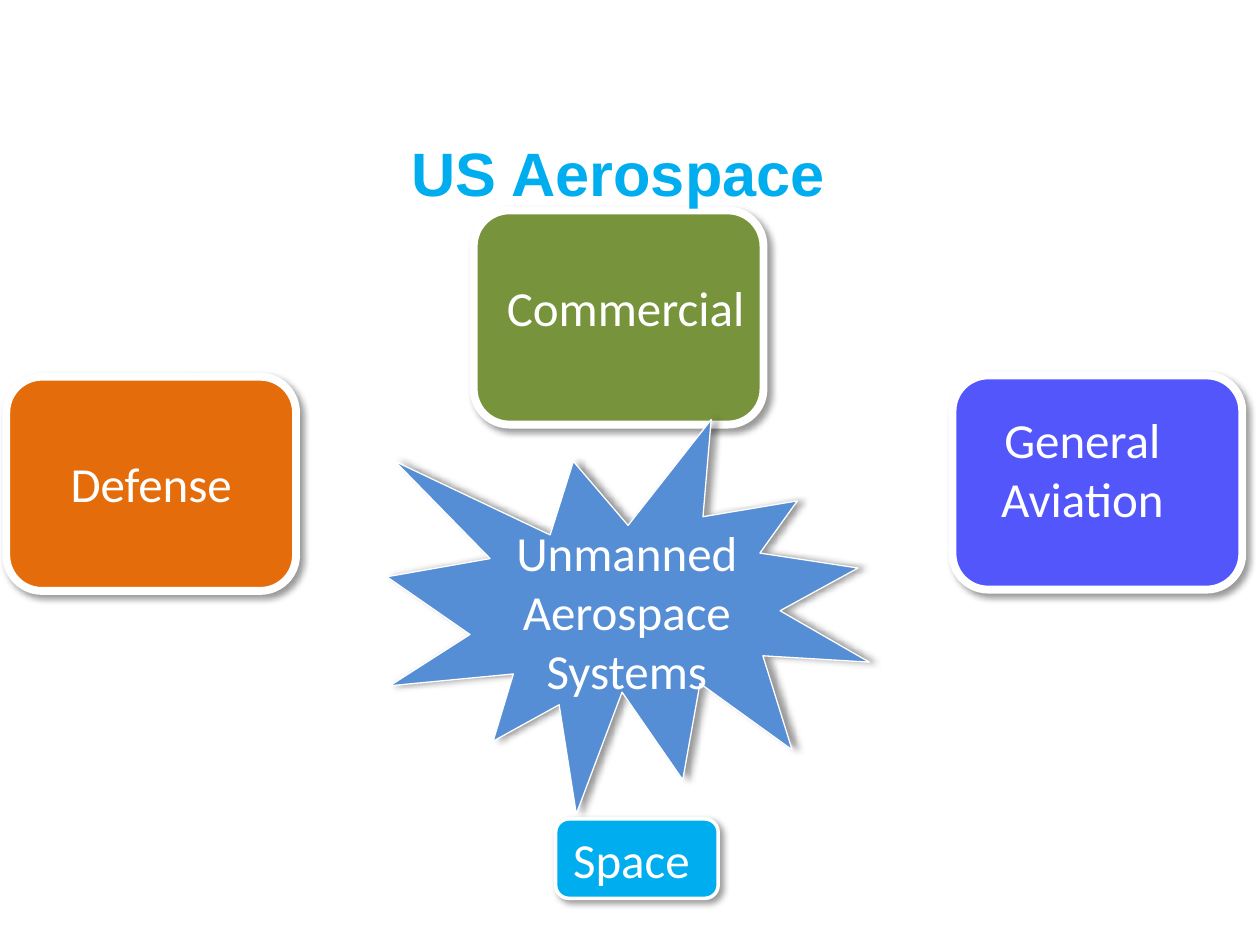
from dataclasses import dataclass

from lxml import etree
from pptx import Presentation
from pptx.dml.color import RGBColor
from pptx.enum.shapes import MSO_SHAPE
from pptx.enum.text import MSO_ANCHOR, MSO_AUTO_SIZE, PP_ALIGN
from pptx.oxml.ns import qn
from pptx.util import Inches, Pt

ROUNDED = MSO_SHAPE.ROUNDED_RECTANGLE
BURST = MSO_SHAPE.EXPLOSION1
MIDDLE = MSO_ANCHOR.MIDDLE
CENTER = PP_ALIGN.CENTER
GROW = MSO_AUTO_SIZE.SHAPE_TO_FIT_TEXT
TITLE_ONLY = 5


@dataclass(frozen=True)
class Theme:
    title_font: str = "Arial"
    body_font: str = "Calibri"
    title_size: float = 35
    body_size: float = 28
    white: str = "FFFFFF"
    sky: str = "00AEEF"
    orange: str = "E46C0A"
    green: str = "77933C"
    violet: str = "5357FB"
    blue: str = "558ED5"
    shadow: str = "000000"


THEME = Theme()

TITLE = ("US Aerospace ", (0.36, 1, 9.23, 0.73))

CARD_SIZE = (2.3, 1.7)

# shape, fill, line width, shadow angle, shape box, label lines, label box
SECTORS = [
    (ROUNDED, THEME.orange, 4.5, 45, (0.05, 2.99, *CARD_SIZE),
     ["Defense"], (0.29, 3.55, 1.82, 0.57)),
    (ROUNDED, THEME.green, 4.5, 45, (3.76, 1.67, *CARD_SIZE),
     ["Commercial"], (3.75, 2.15, 2.43, 0.57)),
    (ROUNDED, THEME.violet, 4.5, 45, (7.56, 2.98, *CARD_SIZE),
     ["General", "Aviation"], (7.5, 3.2, 2.18, 1.04)),
    (BURST, THEME.blue, 0.75, 0, (3.07, 3.33, 3.83, 3.13),
     ["Unmanned Aerospace Systems"], (3.76, 4.1, 2.43, 1.51)),
]

SPACE = (ROUNDED, THEME.sky, 2, 45, (4.41, 6.5, 1.29, 0.63))
SPACE_LABEL = ["Space "]


def inches(box):
    return [Inches(length) for length in box]


def add_shadow(shape, angle):
    """Give the shape a soft outer shadow that falls at the angle in degrees."""
    shape.shadow.inherit = False
    effects = shape._element.spPr.find(qn("a:effectLst"))
    shadow = etree.SubElement(
        effects, qn("a:outerShdw"), blurRad=str(Pt(4)), dist=str(Pt(3)),
        dir=str(angle * 60000), algn="ctr", rotWithShape="0")
    color = etree.SubElement(shadow, qn("a:srgbClr"), val=THEME.shadow)
    etree.SubElement(color, qn("a:alpha"), val="40000")


def add_panel(slide, kind, fill, line_width, angle, box):
    panel = slide.shapes.add_shape(kind, *inches(box))
    panel.fill.solid()
    panel.fill.fore_color.rgb = RGBColor.from_string(fill)
    panel.line.color.rgb = RGBColor.from_string(THEME.white)
    panel.line.width = Pt(line_width)
    add_shadow(panel, angle)
    return panel


def write_lines(frame, lines, font, size, color, bold=False):
    for index, line in enumerate(lines):
        para = frame.add_paragraph() if index else frame.paragraphs[0]
        para.alignment = CENTER
        span = para.add_run()
        span.text = line
        span.font.name = font
        span.font.size = Pt(size)
        span.font.bold = bold
        span.font.color.rgb = RGBColor.from_string(color)


def write_label(frame, lines):
    write_lines(frame, lines, THEME.body_font, THEME.body_size, THEME.white)


def add_label(slide, lines, box):
    frame = slide.shapes.add_textbox(*inches(box)).text_frame
    frame.word_wrap = True
    frame.auto_size = GROW
    write_label(frame, lines)


def place_title(slide, text, box):
    title = slide.shapes.title
    title.left, title.top, title.width, title.height = inches(box)
    title.text_frame.vertical_anchor = MIDDLE
    write_lines(title.text_frame, [text], THEME.title_font, THEME.title_size,
                THEME.sky, bold=True)
    # The title overlaps the top card, so it is brought in front of it.
    slide.shapes._spTree.append(title._element)


def main():
    deck = Presentation()
    deck.slide_width, deck.slide_height = Inches(10), Inches(7.5)
    slide = deck.slides.add_slide(deck.slide_layouts[TITLE_ONLY])

    for *panel, lines, label_box in SECTORS:
        add_panel(slide, *panel)
        add_label(slide, lines, label_box)

    place_title(slide, *TITLE)

    space_frame = add_panel(slide, *SPACE).text_frame
    space_frame.word_wrap = False
    space_frame.vertical_anchor = MIDDLE
    write_label(space_frame, SPACE_LABEL)

    deck.save("out.pptx")


if __name__ == "__main__":
    main()
